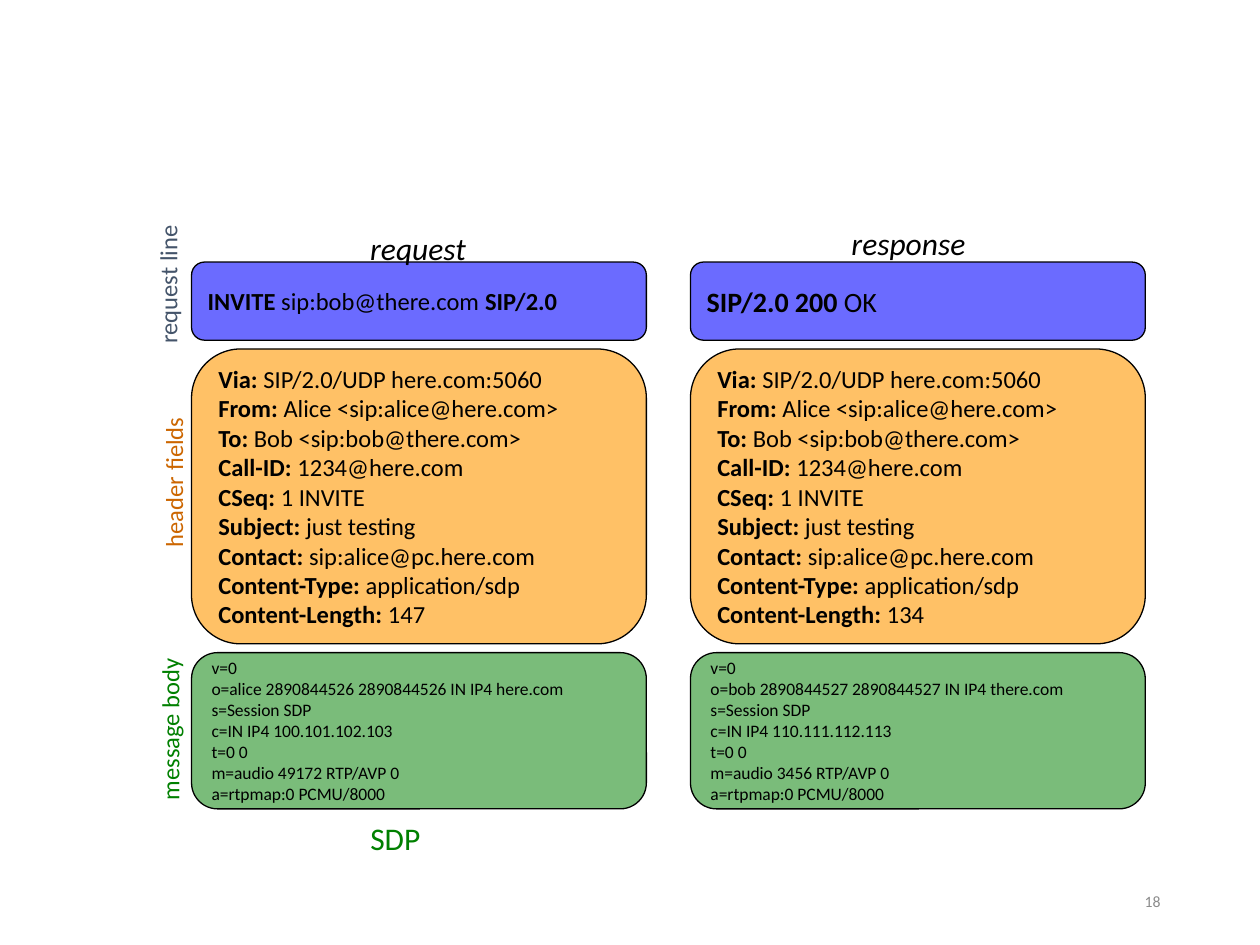
from lxml import etree
from pptx import Presentation
from pptx import util as u
from pptx.dml.color import RGBColor
from pptx.enum import shapes, text
from pptx.oxml.ns import qn

COL_W = 3.61
# top, height, fill, opacity in percent
LINE_BAND = (2.08, 0.62, "0000FF", 58)
HEADER_BAND = (2.77, 2.34, "FF9900", 60)
BODY_BAND = (5.18, 1.24, "008000", 52)


def rgb(value):
    return RGBColor.from_string(value)


def add_run(p, words, size, color="000000", bold=False, italic=False):
    r = p.add_run()
    r.text = words
    r.font.name = "Calibri"
    r.font.size = u.Pt(size)
    r.font.bold = bold
    r.font.italic = italic
    r.font.color.rgb = rgb(color)


def add_label(s, words, x, y, w, h, size, color="000000", italic=False,
              rotation=0, align=text.PP_ALIGN.LEFT, anchor=text.MSO_ANCHOR.TOP):
    tb = s.shapes.add_textbox(u.Inches(x), u.Inches(y), u.Inches(w), u.Inches(h))
    tb.rotation = rotation
    tf = tb.text_frame
    tf.word_wrap = False
    tf.vertical_anchor = anchor
    p = tf.paragraphs[0]
    p.alignment = align
    add_run(p, words, size, color, italic=italic)


def add_band(s, x, band, lines, size):
    """Rounded translucent box; each line is a list of (words, bold) runs."""
    y, h, color, opacity = band
    sp = s.shapes.add_shape(shapes.MSO_SHAPE.ROUNDED_RECTANGLE, u.Inches(x),
                            u.Inches(y), u.Inches(COL_W), u.Inches(h))
    sp.shadow.inherit = False
    sp.fill.solid()
    sp.fill.fore_color.rgb = rgb(color)
    clr = sp.fill._xPr.find(qn("a:solidFill"))[0]
    etree.SubElement(clr, qn("a:alpha")).set("val", str(opacity * 1000))
    sp.line.color.rgb = rgb("000000")
    sp.line.width = u.Pt(0.75)
    tf = sp.text_frame
    tf.word_wrap = False
    tf.vertical_anchor = text.MSO_ANCHOR.MIDDLE
    for i, line in enumerate(lines):
        p = tf.add_paragraph() if i else tf.paragraphs[0]
        p.alignment = text.PP_ALIGN.LEFT
        for words, bold in line:
            add_run(p, words, size, bold=bold)


def header_lines(length):
    fields = [
        ("Via:", "SIP/2.0/UDP here.com:5060"),
        ("From:", "Alice <sip:alice@here.com>"),
        ("To:", "Bob <sip:bob@there.com>"),
        ("Call-ID:", "1234@here.com"),
        ("CSeq:", "1 INVITE"),
        ("Subject:", "just testing"),
        ("Contact:", "sip:alice@pc.here.com"),
        ("Content-Type:", "application/sdp"),
        ("Content-Length:", length),
    ]
    return [[(name, True), (" " + value, False)] for name, value in fields]


def sdp_lines(user, session, host, address, port):
    lines = ["v=0", f"o={user} {session} {session} IN IP4 {host}", "s=Session SDP",
             f"c=IN IP4 {address}", "t=0 0", f"m=audio {port} RTP/AVP 0",
             "a=rtpmap:0 PCMU/8000"]
    return [[(line, False)] for line in lines]


def add_message(s, x, start_line, start_size, length, sdp):
    add_band(s, x, LINE_BAND, [start_line], start_size)
    add_band(s, x, HEADER_BAND, header_lines(length), 14)
    add_band(s, x, BODY_BAND, sdp_lines(*sdp), 10)


def main():
    prs = Presentation()
    prs.slide_width, prs.slide_height = u.Inches(10), u.Inches(7.5)
    s = prs.slides.add_slide(prs.slide_layouts[6])

    # Request and response columns
    add_message(s, 1.52, [("INVITE", True), (" sip:bob@there.com ", False),
                          ("SIP/2.0", True)], 14, "147",
                ("alice", "2890844526", "here.com", "100.101.102.103", "49172"))
    add_message(s, 5.48, [("SIP/2.0 200", True), (" OK", False)], 16, "134",
                ("bob", "2890844527", "there.com", "110.111.112.113", "3456"))

    # Vertical labels beside the bands
    for words, x, y, w, color in [("message body", 0.54, 5.47, 1.62, "008000"),
                                  ("header fields", 0.66, 3.55, 1.44, "CC6600"),
                                  ("request line", 0.69, 2.01, 1.29, "44546A")]:
        add_label(s, words, x, y, w, 0.34, 14, color, rotation=270)

    # Column headings, caption and slide number
    add_label(s, "request", 2.84, 1.77, 1.04, 0.4, 18, italic=True)
    add_label(s, "response", 6.66, 1.73, 1.23, 0.4, 18, italic=True)
    add_label(s, "SDP", 2.84, 6.45, 0.72, 0.4, 18, "008000")
    add_label(s, "18", 7.06, 6.95, 2.25, 0.4, 9, "8C8C8C",
              align=text.PP_ALIGN.RIGHT, anchor=text.MSO_ANCHOR.MIDDLE)

    prs.save("out.pptx")


if __name__ == "__main__":
    main()
